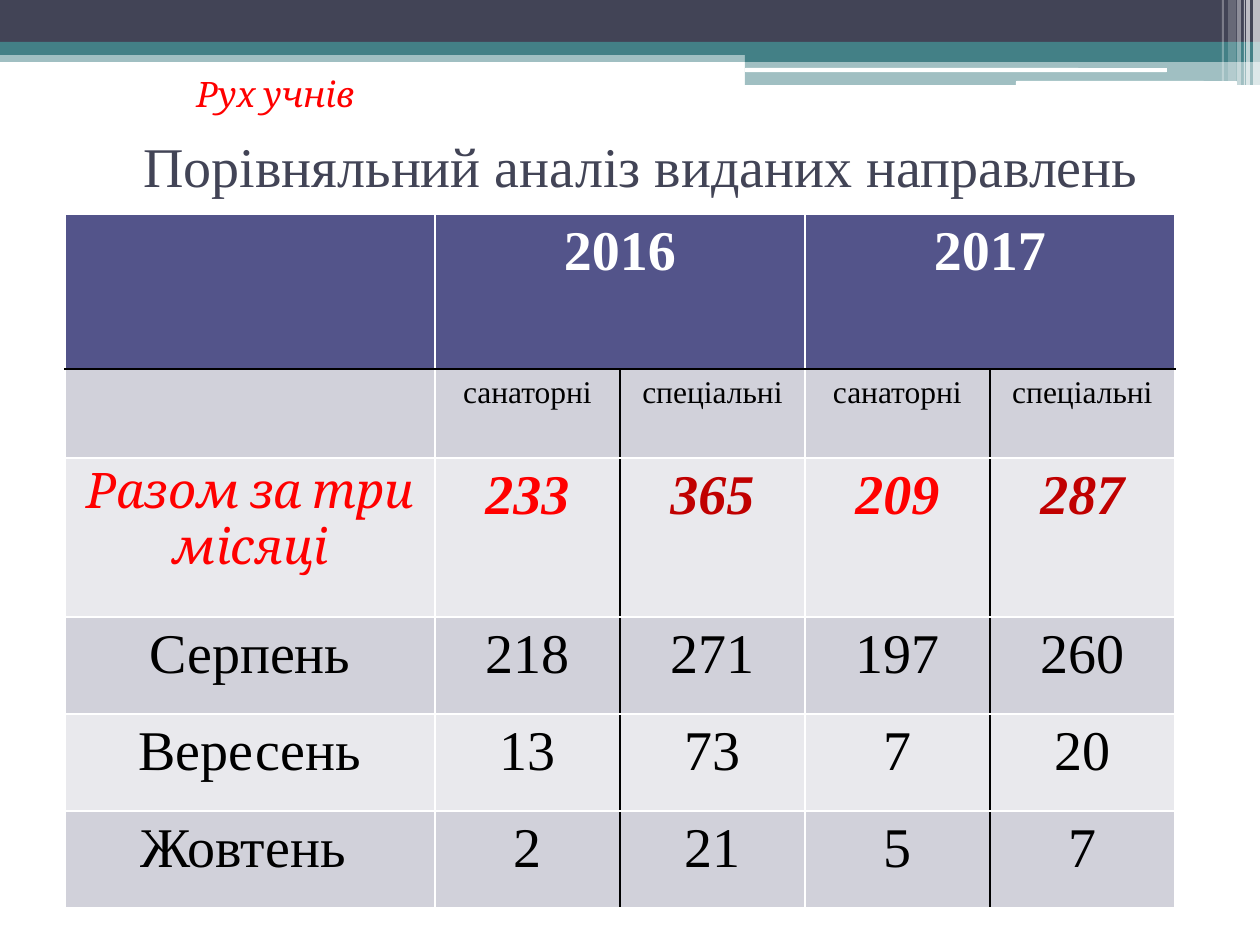
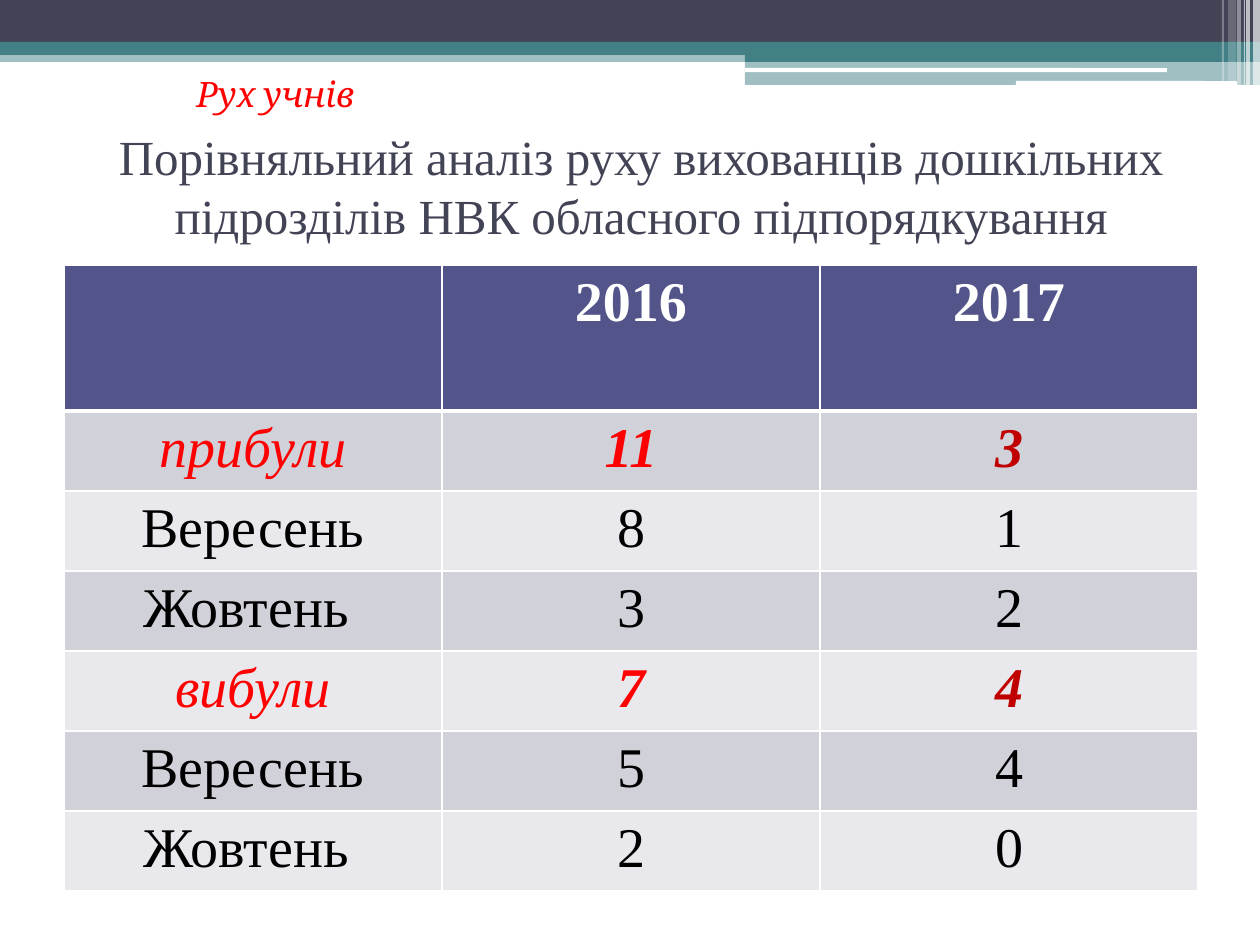
"""Build two slides comparing pupil movement in 2016 and 2017."""
from lxml.etree import SubElement
from pptx import Presentation
from pptx.dml.color import RGBColor
from pptx.enum.shapes import MSO_SHAPE as Preset
from pptx.enum.text import MSO_ANCHOR as Anchor, MSO_AUTO_SIZE as AutoSize, PP_ALIGN as Align
from pptx.oxml.ns import qn
from pptx.util import Pt

SERIF, ACCENT_FONT = "Times New Roman", "Cambria"
WHITE = RGBColor(0xFF, 0xFF, 0xFF)
BLACK = RGBColor(0x00, 0x00, 0x00)
RED = RGBColor(0xFF, 0x00, 0x00)
DARK_RED = RGBColor(0xC0, 0x00, 0x00)
SLATE = RGBColor(0x42, 0x44, 0x56)
TEAL = RGBColor(0x43, 0x80, 0x86)
INDIGO = RGBColor(0x53, 0x54, 0x8A)
STRIPES = (RGBColor(0xD1, 0xD1, 0xDA), RGBColor(0xE9, 0xE9, 0xED))

SECTION = "Рух учнів"
SLIDES = [
    {
        "title": "Порівняльний аналіз виданих направлень",
        "title_size": 32,
        "title_height": 99,
        "corner": (65, 214),
        "columns": [370, 185, 185, 185, 185],
        "heights": [155, 89, 159, 97, 97, 97],
        "header_line": (BLACK, 1),
        "paired": True,
        "total_label": (ACCENT_FONT, 28),
        "rows": [
            ("header", ["", "2016", "", "2017", ""]),
            ("kinds", ["", "санаторні", "спеціальні", "санаторні", "спеціальні"]),
            ("total", ["Разом за три місяці", "233", "365", "209", "287"]),
            ("month", ["Серпень", "218", "271", "197", "260"]),
            ("month", ["Вересень", "13", "73", "7", "20"]),
            ("month", ["Жовтень ", "2", "21", "5", "7"]),
        ],
    },
    {
        "title": "Порівняльний аналіз руху вихованців дошкільних "
                 "підрозділів НВК обласного підпорядкування",
        "title_size": 28,
        "title_height": 139,
        "corner": (64, 265),
        "columns": [378] * 3,
        "heights": [146] + [80] * 6,
        "header_line": (WHITE, 3),
        "paired": False,
        "total_label": (SERIF, 32),
        "rows": [
            ("header", ["", "2016", "2017"]),
            ("total", ["прибули", "11", "3"]),
            ("month", ["Вересень", "8", "1"]),
            ("month", ["Жовтень ", "3", "2"]),
            ("total", ["вибули", "7", "4"]),
            ("month", ["Вересень", "5", "4"]),
            ("month", ["Жовтень ", "2", "0"]),
        ],
    },
]

BANDS = [
    (Preset.RECTANGLE, (0, 50, 1260, 12), TEAL, 50),
    (Preset.RECTANGLE, (0, 0, 1260, 42), SLATE, 100),
    (Preset.RECTANGLE, (0, 42, 1260, 13), TEAL, 100),
    (Preset.RECTANGLE, (745, 49, 515, 13), TEAL, 100),
    (Preset.RECTANGLE, (745, 62, 515, 23), TEAL, 50),
    (Preset.ROUNDED_RECTANGLE, (745, 68, 422, 4), WHITE, 100),
    (Preset.ROUNDED_RECTANGLE, (1016, 81, 221, 5), WHITE, 100),
] + [
    (Preset.RECTANGLE, (left, 0, width, height), WHITE, opacity)
    for left, width, height, opacity in [
        (1253, 7, 85, 65), (1246, 4, 85, 65), (1244, 1, 85, 60),
        (1237, 4, 85, 40), (1228, 8, 81, 20), (1222, 2, 81, 30),
    ]
]


def px(*lengths):
    return [round(length * 914400 / 126) for length in lengths]


def write(frame, text, font_name, size, color, bold=False, italic=False, align=None):
    paragraph = frame.paragraphs[0]
    paragraph.alignment = align
    run = paragraph.add_run()
    run.text = text
    font = run.font
    font.name, font.size, font.bold, font.italic = font_name, Pt(size), bold, italic
    font.color.rgb = color


def add_bands(slide, layout):
    """Draw the bands and move them to the layout, where all slides share them."""
    for number, (preset, box, color, opacity) in enumerate(BANDS, 101):
        band = slide.shapes.add_shape(preset, *px(*box))
        band.shadow.inherit = False
        band.fill.solid()
        band.fill.fore_color.rgb = color
        band.line.fill.background()
        if opacity < 100:
            tint = band.element.spPr.find(qn("a:solidFill"))[0]
            SubElement(tint, qn("a:alpha"), val=str(opacity * 1000))
        band.element.nvSpPr.cNvPr.set("id", str(number))
        layout.shapes.element.append(band.element)


def set_borders(cell, borders):
    properties = cell._tc.get_or_add_tcPr()
    for side in "LRTB":
        color, width = borders[side]
        line = SubElement(properties, qn(f"a:ln{side}"), w=str(Pt(width)))
        SubElement(SubElement(line, qn("a:solidFill")), qn("a:srgbClr"), val=str(color))


def cell_borders(content, row, column):
    borders = dict.fromkeys("LRTB", (WHITE, 1))
    if row == 0:
        borders["B"] = content["header_line"]
    else:
        if row == 1:
            borders["T"] = content["header_line"]
        if content["paired"] and column:
            borders["R" if column % 2 else "L"] = (BLACK, 1)
    return borders


def cell_style(content, kind, column):
    """Return font, size, colour, bold and italic."""
    if kind == "header":
        return SERIF, 32, WHITE, True, False
    if kind == "total":
        if column == 0:
            return *content["total_label"], RED, False, True
        return SERIF, 32, RED if column % 2 else DARK_RED, True, True
    return SERIF, 18 if kind == "kinds" else 32, BLACK, False, False


def add_comparison(slide, content):
    columns, heights, rows = content["columns"], content["heights"], content["rows"]
    box = px(*content["corner"], sum(columns), sum(heights))
    table = slide.shapes.add_table(len(rows), len(columns), *box).table
    for column, width in zip(table.columns, px(*columns)):
        column.width = width
    for row, height in zip(table.rows, px(*heights)):
        row.height = height
    for row, (kind, texts) in enumerate(rows):
        for column, text in enumerate(texts):
            cell = table.cell(row, column)
            set_borders(cell, cell_borders(content, row, column))
            cell.fill.solid()
            cell.fill.fore_color.rgb = STRIPES[(row - 1) % 2] if row else INDIGO
            if text:
                write(cell.text_frame, text, *cell_style(content, kind, column), Align.CENTER)
    if content["paired"]:
        for column in range(1, len(columns), 2):
            table.cell(0, column).merge(table.cell(0, column + 1))


def add_headings(slide, content):
    title = slide.shapes.title
    title.left, title.top, title.width, title.height = px(74, 116, 1134, content["title_height"])
    frame = title.text_frame
    frame.auto_size, frame.vertical_anchor = AutoSize.NONE, Anchor.MIDDLE
    write(frame, content["title"], SERIF, content["title_size"], SLATE, align=Align.CENTER)

    frame = slide.shapes.add_textbox(*px(184, 66, 893, 55)).text_frame
    frame.word_wrap, frame.auto_size = True, AutoSize.SHAPE_TO_FIT_TEXT
    write(frame, SECTION, ACCENT_FONT, 20, RED, italic=True)


def main():
    presentation = Presentation()
    presentation.slide_width, presentation.slide_height = px(1260, 945)
    layout = presentation.slide_layouts[5]
    for number, content in enumerate(SLIDES):
        slide = presentation.slides.add_slide(layout)
        if number == 0:
            add_bands(slide, layout)
        add_headings(slide, content)
        add_comparison(slide, content)
    presentation.save("out.pptx")


if __name__ == "__main__":
    main()
